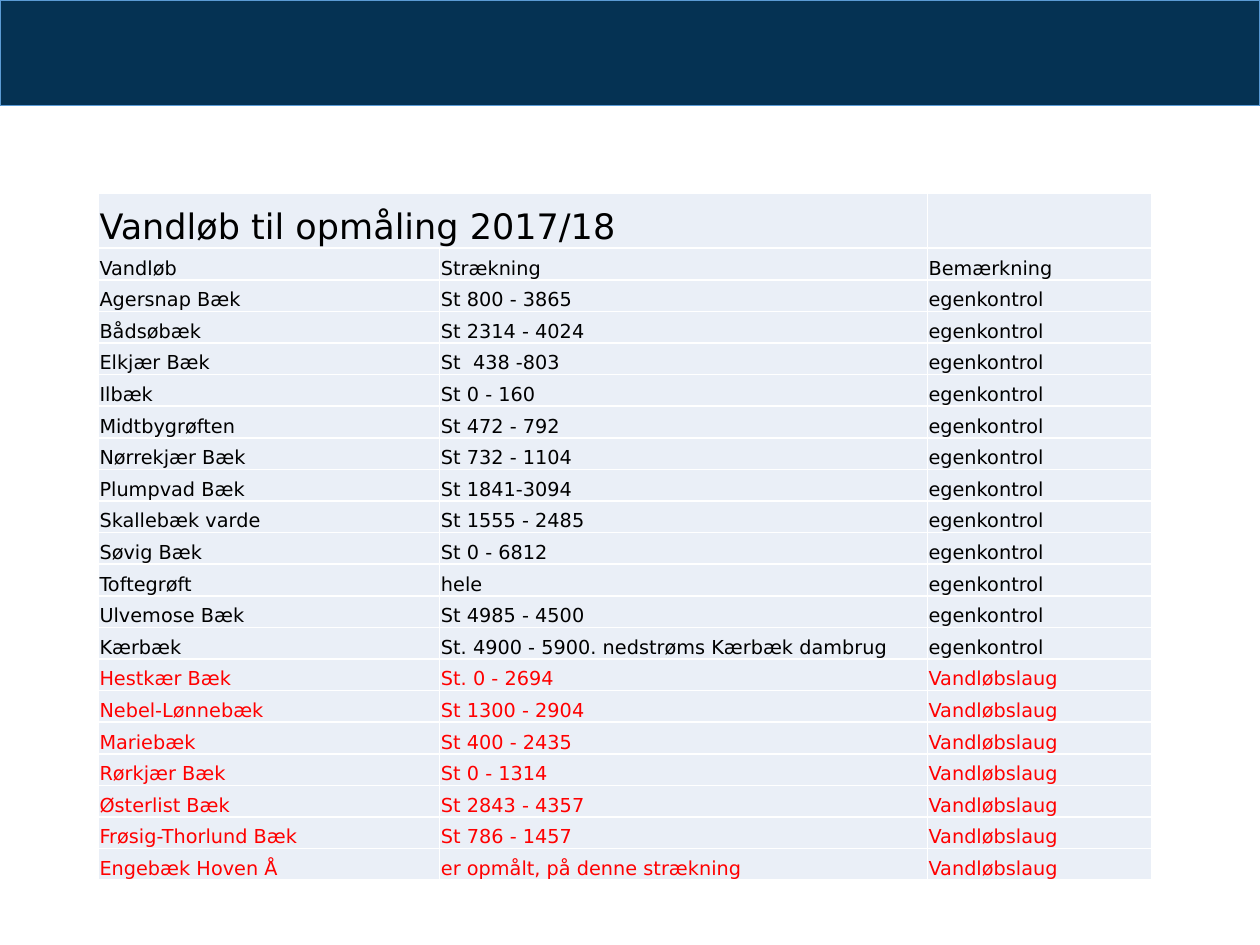
"""Build a slide with the table of watercourses to be surveyed in 2017/18."""
from lxml import etree
from pptx import Presentation
from pptx.dml.color import RGBColor
from pptx.enum.shapes import MSO_SHAPE
from pptx.enum.text import MSO_ANCHOR
from pptx.oxml.ns import qn
from pptx.util import Inches, Pt

RECTANGLE = MSO_SHAPE.RECTANGLE
BOTTOM = MSO_ANCHOR.BOTTOM

NAVY = RGBColor(0x05, 0x32, 0x53)
BLUE = RGBColor(0x5B, 0x9B, 0xD5)
PALE = RGBColor(0xEA, 0xEF, 0xF7)
WHITE = RGBColor(0xFF, 0xFF, 0xFF)
BLACK = RGBColor(0x00, 0x00, 0x00)
RED = RGBColor(0xFF, 0x00, 0x00)

TITLE = "Vandløb til opmåling 2017/18"
HEADINGS = ("Vandløb", "Strækning", "Bemærkning")
OWN_CONTROL = [
    ("Agersnap Bæk", "St 800 - 3865"),
    ("Bådsøbæk", "St 2314 - 4024"),
    ("Elkjær Bæk", "St  438 -803"),
    ("Ilbæk", "St 0 - 160"),
    ("Midtbygrøften", "St 472 - 792"),
    ("Nørrekjær Bæk", "St 732 - 1104"),
    ("Plumpvad Bæk", "St 1841-3094"),
    ("Skallebæk varde", "St 1555 - 2485"),
    ("Søvig Bæk", "St 0 - 6812"),
    ("Toftegrøft", "hele"),
    ("Ulvemose Bæk", "St 4985 - 4500"),
    ("Kærbæk", "St. 4900 - 5900. nedstrøms Kærbæk dambrug"),
]
GUILD = [
    ("Hestkær Bæk", "St. 0 - 2694"),
    ("Nebel-Lønnebæk", "St 1300 - 2904"),
    ("Mariebæk", "St 400 - 2435"),
    ("Rørkjær Bæk", "St 0 - 1314"),
    ("Østerlist Bæk", "St 2843 - 4357"),
    ("Frøsig-Thorlund Bæk", "St 786 - 1457"),
    ("Engebæk Hoven Å", "er opmålt, på denne strækning"),
]
COLUMN_WIDTHS = (2.71, 3.87, 1.78)
TABLE_HEIGHT = 5.46
TITLE_HEIGHT = 0.44


class SlideBuilder:
    """Holds the style and the current slide."""

    def __init__(self, page, font_name):
        self.page = page
        self.font_name = font_name

    def band(self, left, top, width, height):
        box = self.page.shapes.add_shape(
            RECTANGLE, Inches(left), Inches(top), Inches(width), Inches(height))
        box.shadow.inherit = False
        box.fill.solid()
        box.fill.fore_color.rgb = NAVY
        box.line.color.rgb = BLUE
        box.line.width = Pt(0.5)

    def table(self, left, top, widths, heights):
        frame = self.page.shapes.add_table(
            len(heights), len(widths), Inches(left), Inches(top),
            Inches(sum(widths)), Inches(sum(heights)))
        table = frame.table
        table.first_row = False
        table.horz_banding = False
        for column, width in zip(table.columns, widths):
            column.width = Inches(width)
        for row, height in zip(table.rows, heights):
            row.height = Inches(height)
        return table

    def cell(self, cell, text, size, color):
        cell.margin_left = cell.margin_right = cell.margin_top = Inches(0.01)
        cell.margin_bottom = 0
        cell.vertical_anchor = BOTTOM
        self.borders(cell)
        cell.fill.solid()
        cell.fill.fore_color.rgb = PALE
        cell.text = text
        font = cell.text_frame.paragraphs[0].font
        font.name = self.font_name
        font.size = Pt(size)
        font.color.rgb = color

    def borders(self, cell):
        properties = cell._tc.get_or_add_tcPr()
        for side in ("a:lnL", "a:lnR", "a:lnT", "a:lnB"):
            line = etree.SubElement(properties, qn(side), w=str(Pt(1)))
            fill = etree.SubElement(line, qn("a:solidFill"))
            etree.SubElement(fill, qn("a:srgbClr"), val=str(WHITE))


def main():
    deck = Presentation()
    deck.slide_width = Inches(10)
    deck.slide_height = Inches(7.5)
    page = deck.slides.add_slide(deck.slide_layouts[6])
    builder = SlideBuilder(page, "DejaVu Sans")
    builder.band(0, 0, 10, 0.84)

    rows = [((TITLE, "", ""), 20, BLACK), (HEADINGS, 11, BLACK)]
    rows += [((*stream, "egenkontrol"), 11, BLACK) for stream in OWN_CONTROL]
    rows += [((*stream, "Vandløbslaug"), 11, RED) for stream in GUILD]
    body_count = len(rows) - 1
    body_height = (TABLE_HEIGHT - TITLE_HEIGHT) / body_count
    heights = [TITLE_HEIGHT] + [body_height] * body_count

    table = builder.table(0.78, 1.53, COLUMN_WIDTHS, heights)
    for row, (texts, size, color) in zip(table.rows, rows):
        for cell, text in zip(row.cells, texts):
            builder.cell(cell, text, size, color)
    table.cell(0, 0).merge(table.cell(0, 1))
    deck.save("out.pptx")


if __name__ == "__main__":
    main()
